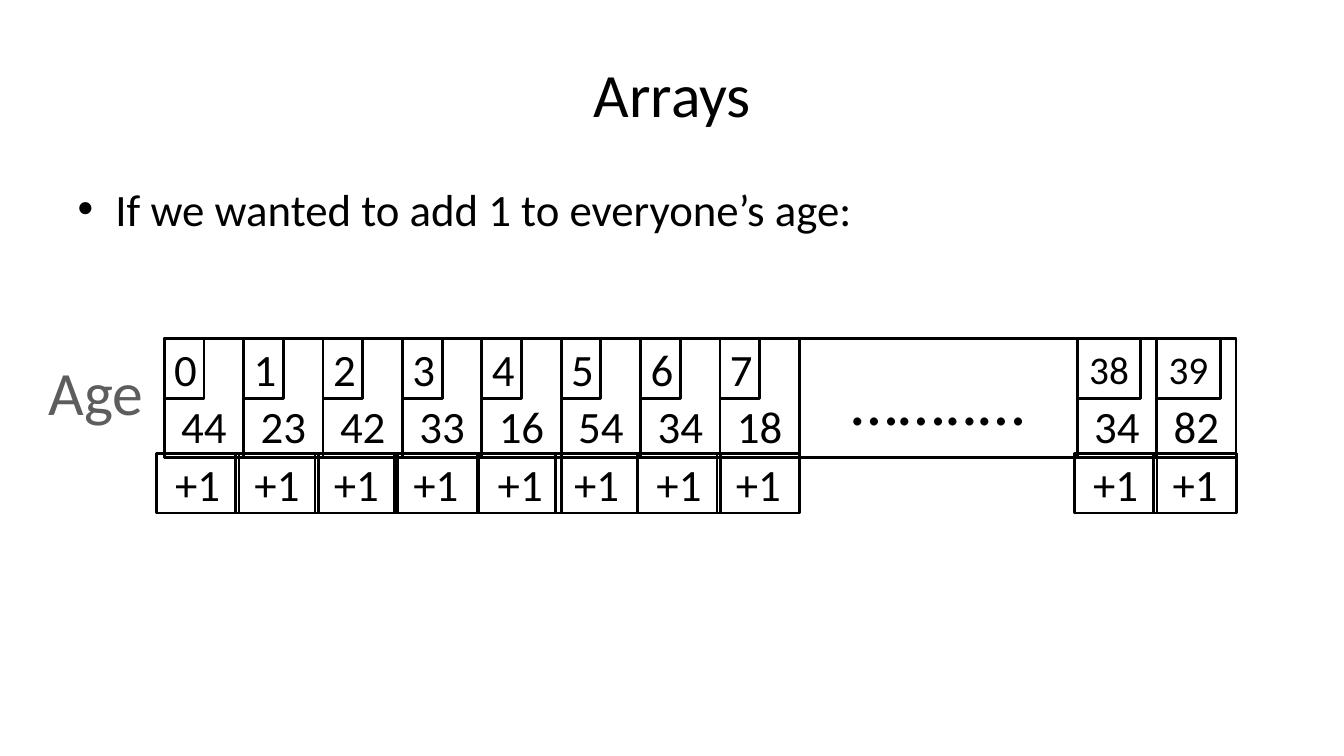
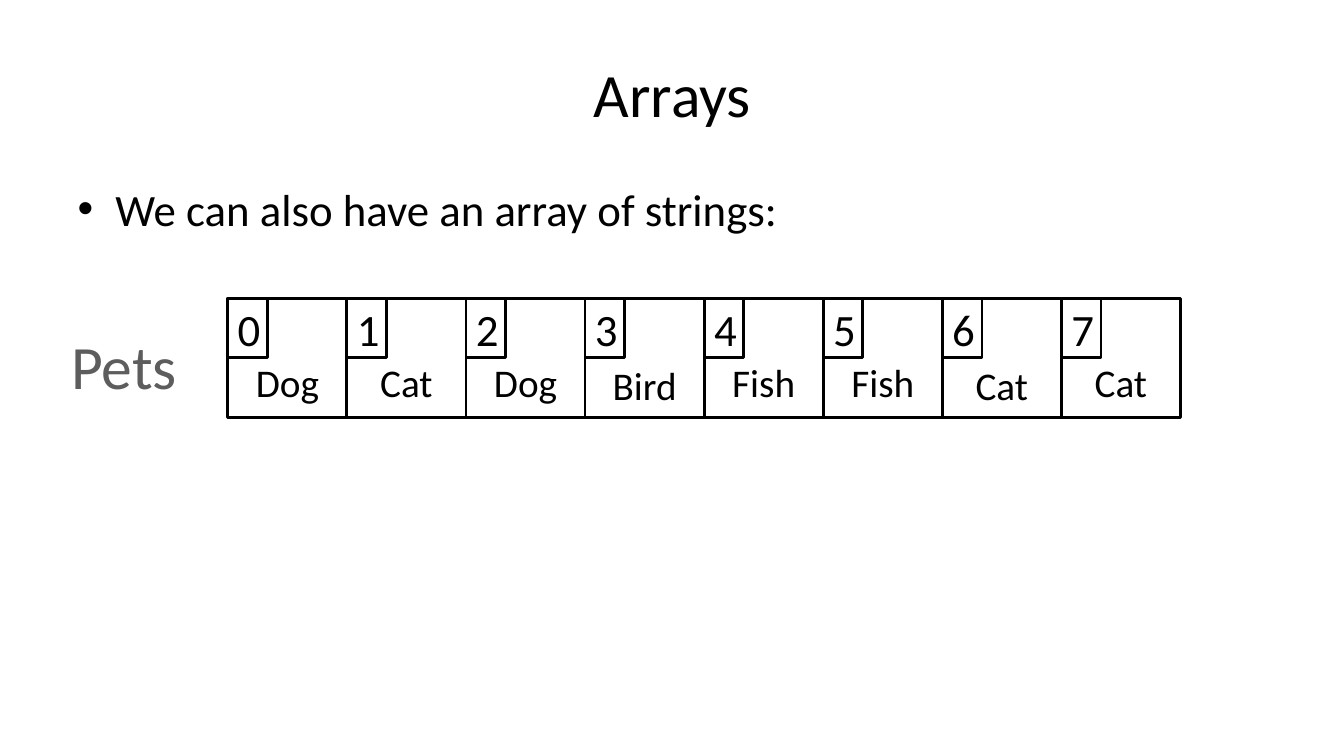
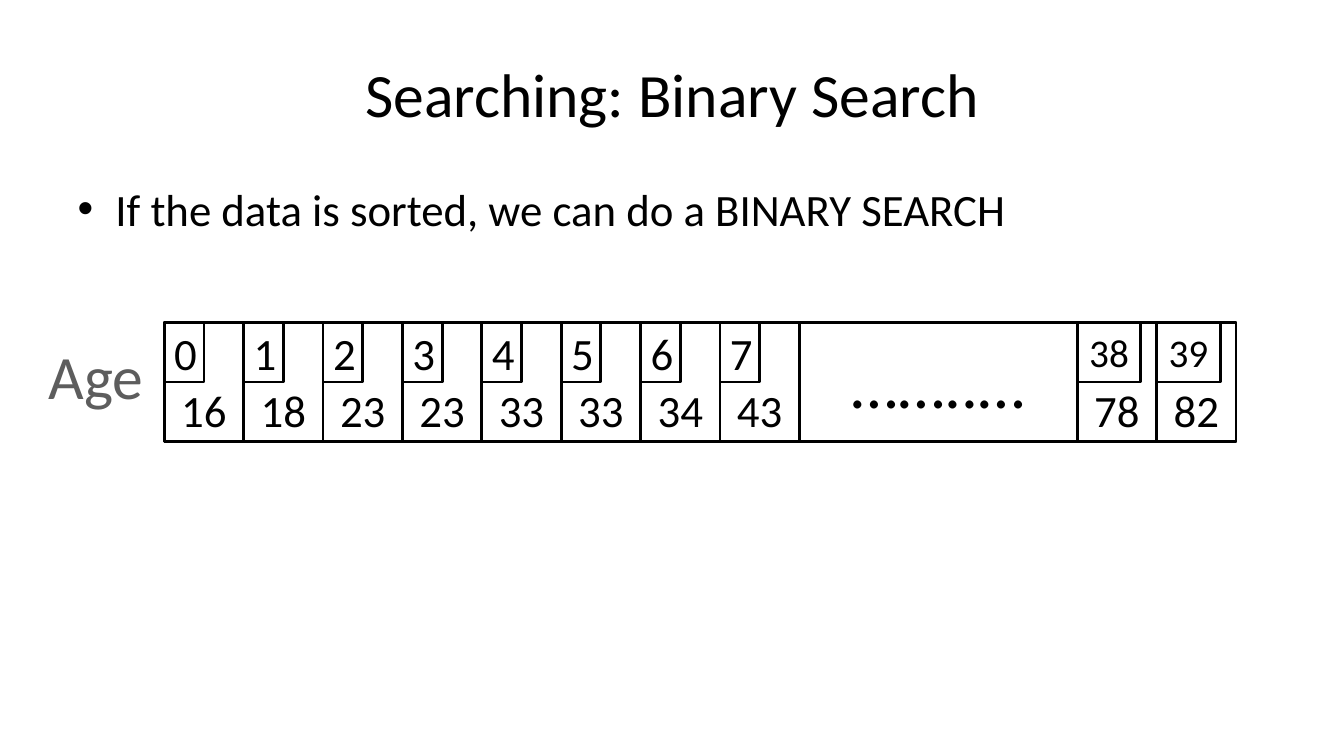
from dataclasses import dataclass

from lxml import etree
from pptx import Presentation
from pptx.dml.color import RGBColor
from pptx.enum.shapes import MSO_SHAPE
from pptx.enum.text import MSO_ANCHOR, MSO_AUTO_SIZE, PP_ALIGN
from pptx.util import Inches, Pt

RECT = MSO_SHAPE.RECTANGLE
MIDDLE, TOP = MSO_ANCHOR.MIDDLE, MSO_ANCHOR.TOP
CENTER, LEFT = PP_ALIGN.CENTER, PP_ALIGN.LEFT
FIT_SHAPE = MSO_AUTO_SIZE.SHAPE_TO_FIT_TEXT
A = "http://schemas.openxmlformats.org/drawingml/2006/main"


@dataclass(frozen=True)
class Theme:
    font: str = "Calibri"
    ink: str = "000000"
    halo: str = "FFFFFF"
    fade: tuple = ((0, "555555"), (49, "5D5D5D"), (50, "000000"),
                   (95, "000000"), (100, "000000"))
    title: int = 44
    body: int = 32
    small: int = 28
    dots: int = 48
    line: float = 2
    halo_line: float = 1.4


THEME = Theme()


def write(tf, text, size=THEME.body, color=THEME.ink, align=CENTER, anchor=MIDDLE):
    tf.vertical_anchor = anchor
    p = tf.paragraphs[0]
    p.alignment = align
    r = p.add_run()
    r.text = text
    r.font.name = THEME.font
    r.font.size = Pt(size)
    r.font.color.rgb = RGBColor.from_string(color)
    return r


def fade_text(r):
    r.font.fill.background()
    rpr = r.font._element
    rpr.remove(rpr.find(f"{{{A}}}noFill"))
    stops = "".join(f'<a:gs pos="{pos * 1000}"><a:srgbClr val="{rgb}"/></a:gs>'
                    for pos, rgb in THEME.fade)
    halo = (f'<a:ln xmlns:a="{A}" w="{Pt(THEME.halo_line)}"><a:solidFill>'
            f'<a:srgbClr val="{THEME.halo}"/></a:solidFill></a:ln>')
    fill = (f'<a:gradFill xmlns:a="{A}"><a:gsLst>{stops}</a:gsLst>'
            '<a:lin ang="5400000" scaled="0"/></a:gradFill>')
    for i, xml in enumerate((halo, fill)):
        rpr.insert(i, etree.fromstring(xml))


class Deck:
    def __init__(self):
        self.prs = Presentation()
        self.prs.slide_width = Inches(13.33)
        self.prs.slide_height = Inches(7.5)
        self.s = None

    def slide(self, title, bullet):
        self.s = self.prs.slides.add_slide(self.prs.slide_layouts[1])
        head, body = self.s.placeholders
        self.place(head, 0.67, 0.3, 12, 1.25)
        self.place(body, 0.67, 1.75, 12, 4.95)
        write(head.text_frame, title, size=THEME.title)
        write(body.text_frame, bullet, align=LEFT, anchor=TOP)

    def place(self, sp, x, y, w, h):
        sp.left, sp.top, sp.width, sp.height = map(Inches, (x, y, w, h))

    def box(self, x, y, w, h, text="", size=THEME.body, drop=None):
        sp = self.s.shapes.add_shape(RECT, *map(Inches, (x, y, w, h)))
        sp.shadow.inherit = False
        sp.fill.background()
        sp.line.color.rgb = RGBColor.from_string(THEME.ink)
        sp.line.width = Pt(THEME.line)
        if text:
            write(sp.text_frame, text, size=size)
        if drop:
            sp.text_frame.margin_top = Inches(drop)
            sp.text_frame.margin_bottom = 0

    def label(self, x, y, w, text):
        sp = self.s.shapes.add_textbox(*map(Inches, (x, y, w, 0.84)))
        tf = sp.text_frame
        tf.word_wrap = False
        tf.auto_size = FIT_SHAPE
        fade_text(write(tf, text, size=THEME.title, anchor=TOP))

    def cell(self, x, y, w, h, value, index, tag_w, size=THEME.body,
             tag_size=THEME.body, drop=0.54):
        self.box(x, y, w, h, value, size=size, drop=drop)
        self.box(x, y, tag_w, h / 2, index, size=tag_size)


ROW_X, ROW_W, ROW_H = 1.63, 10.63, 1.18
HEAD_CELLS, GAP_CELLS, TAIL_CELLS = 8, 3.5, 2
CELL_W = ROW_W / (HEAD_CELLS + GAP_CELLS + TAIL_CELLS)
GAP_X = ROW_X + HEAD_CELLS * CELL_W
TAIL_X = GAP_X + GAP_CELLS * CELL_W
CELL_XS = ([ROW_X + i * CELL_W for i in range(HEAD_CELLS)]
           + [TAIL_X + i * CELL_W for i in range(TAIL_CELLS)])
INDEXES = [*range(HEAD_CELLS), 38, 39]


def age_row(deck, y, ages):
    deck.box(ROW_X, y, ROW_W, ROW_H)
    deck.box(GAP_X, y, GAP_CELLS * CELL_W, ROW_H, "……..…", size=THEME.dots)
    for x, index, age in zip(CELL_XS, INDEXES, ages):
        wide = index > 9
        deck.cell(x, y, CELL_W, ROW_H, str(age), str(index),
                  CELL_W * (0.8 if wide else 0.5),
                  tag_size=THEME.small if wide else THEME.body)
    deck.label(0.37, y + 0.1, 1.17, "Age")


def increments(deck, y):
    shifts = [0.08] * 4 + [0.03, 0.06] + [0.03] * 4
    for x, shift in zip(CELL_XS, shifts):
        deck.box(x - shift, y, 0.82, ROW_H / 2, "+1")


def pet_row(deck, x, y, pets):
    side = ROW_H + 0.001
    for i, pet in enumerate(pets):
        drop = 0.54 if i in (3, 6) else 0.47
        deck.cell(x + i * side, y, side, side, pet, str(i), side / 3,
                  size=THEME.small, drop=drop)
    deck.label(0.6, y + 0.24, 1.26, "Pets")


def main():
    deck = Deck()
    deck.slide("Arrays", "If we wanted to add 1 to everyone’s age:")
    age_row(deck, 3.36, [44, 23, 42, 33, 16, 54, 34, 18, 34, 82])
    increments(deck, 4.5)

    deck.slide("Arrays", "We can also have an array of strings:")
    pet_row(deck, 2.26, 2.96,
            ["Dog", "Cat", "Dog", "Bird", "Fish", "Fish", "Cat", "Cat"])

    deck.slide("Searching: Binary Search",
               "If the data is sorted, we can do a BINARY SEARCH")
    age_row(deck, 3.2, [16, 18, 23, 23, 33, 33, 34, 43, 78, 82])
    deck.prs.save("out.pptx")


if __name__ == "__main__":
    main()
